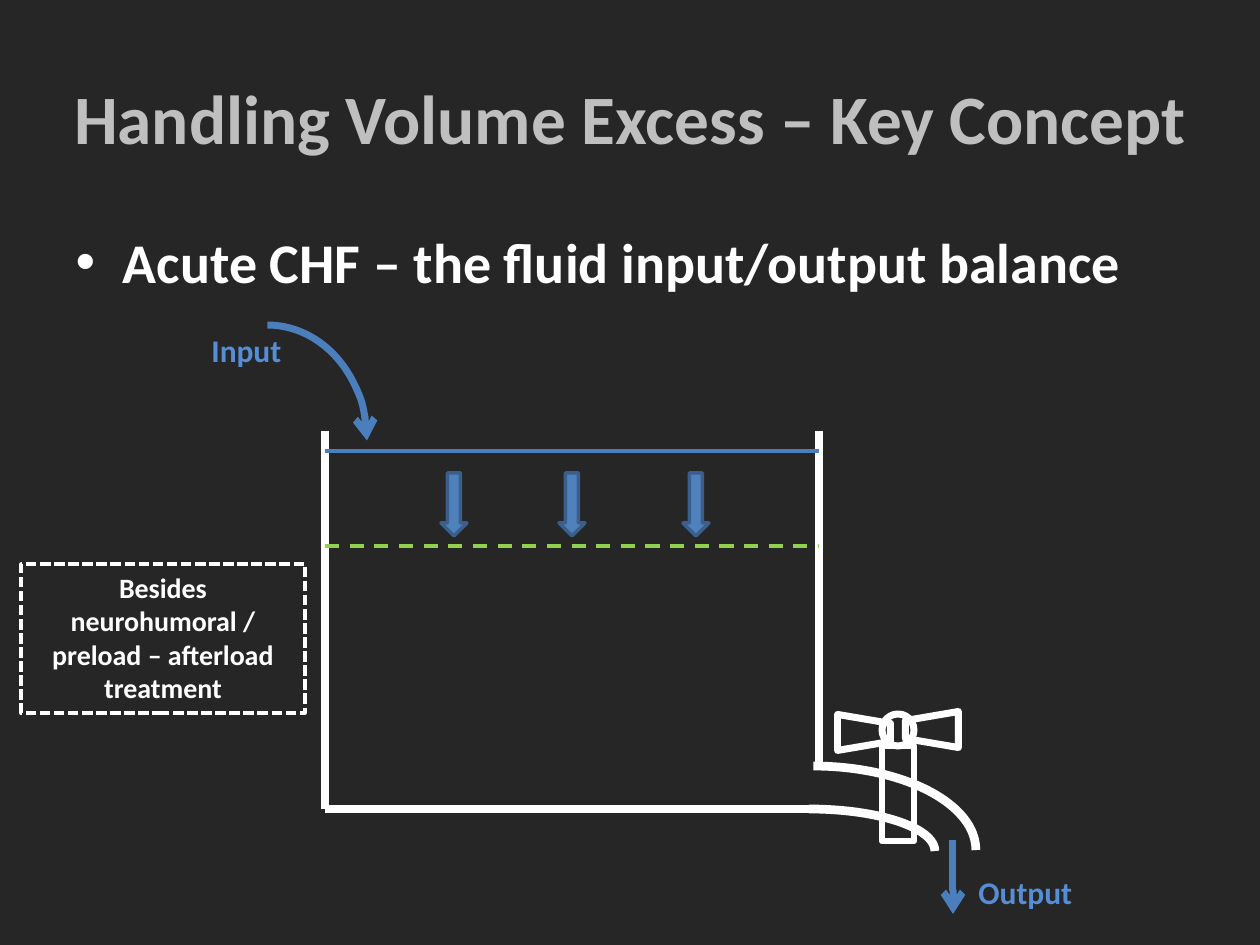
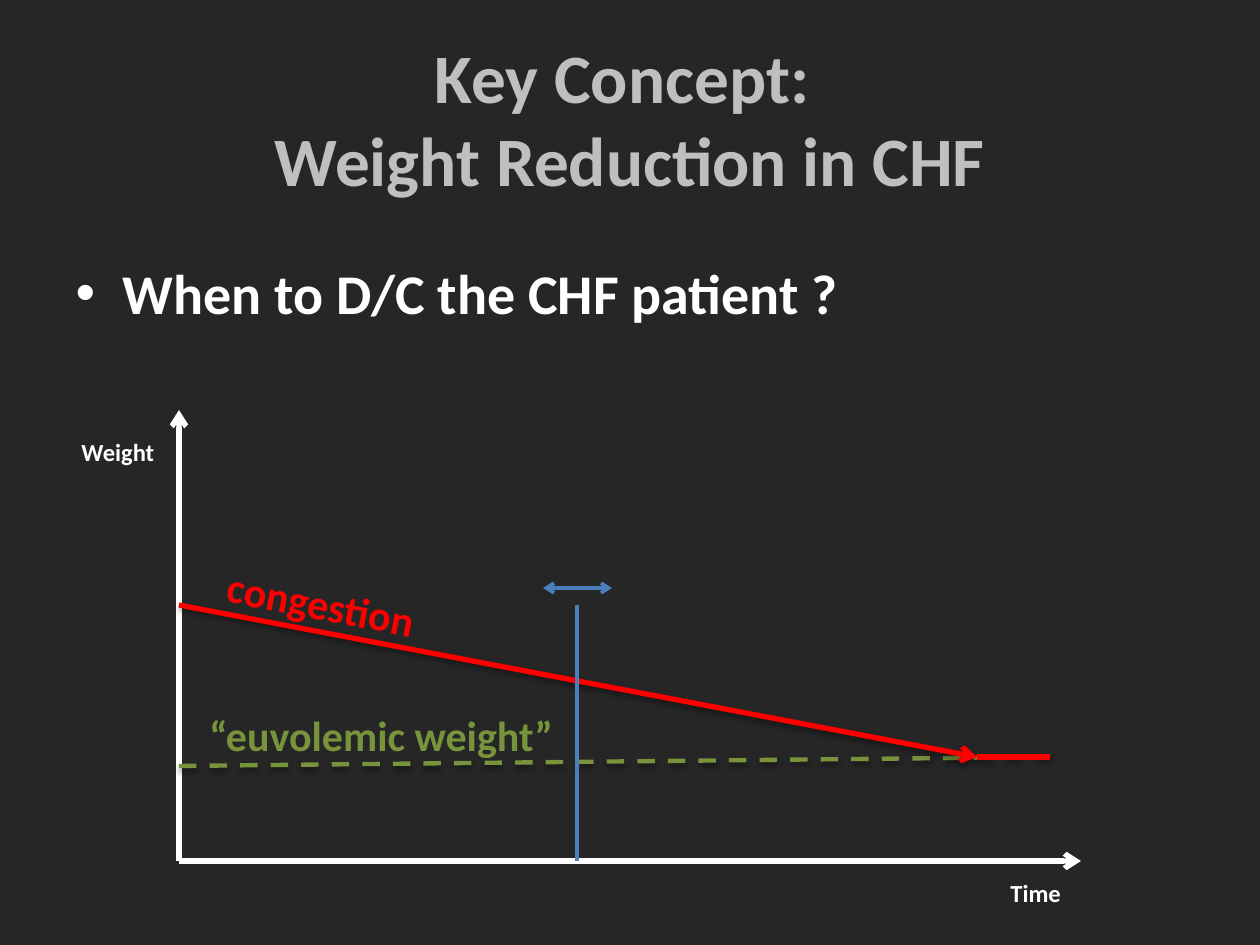
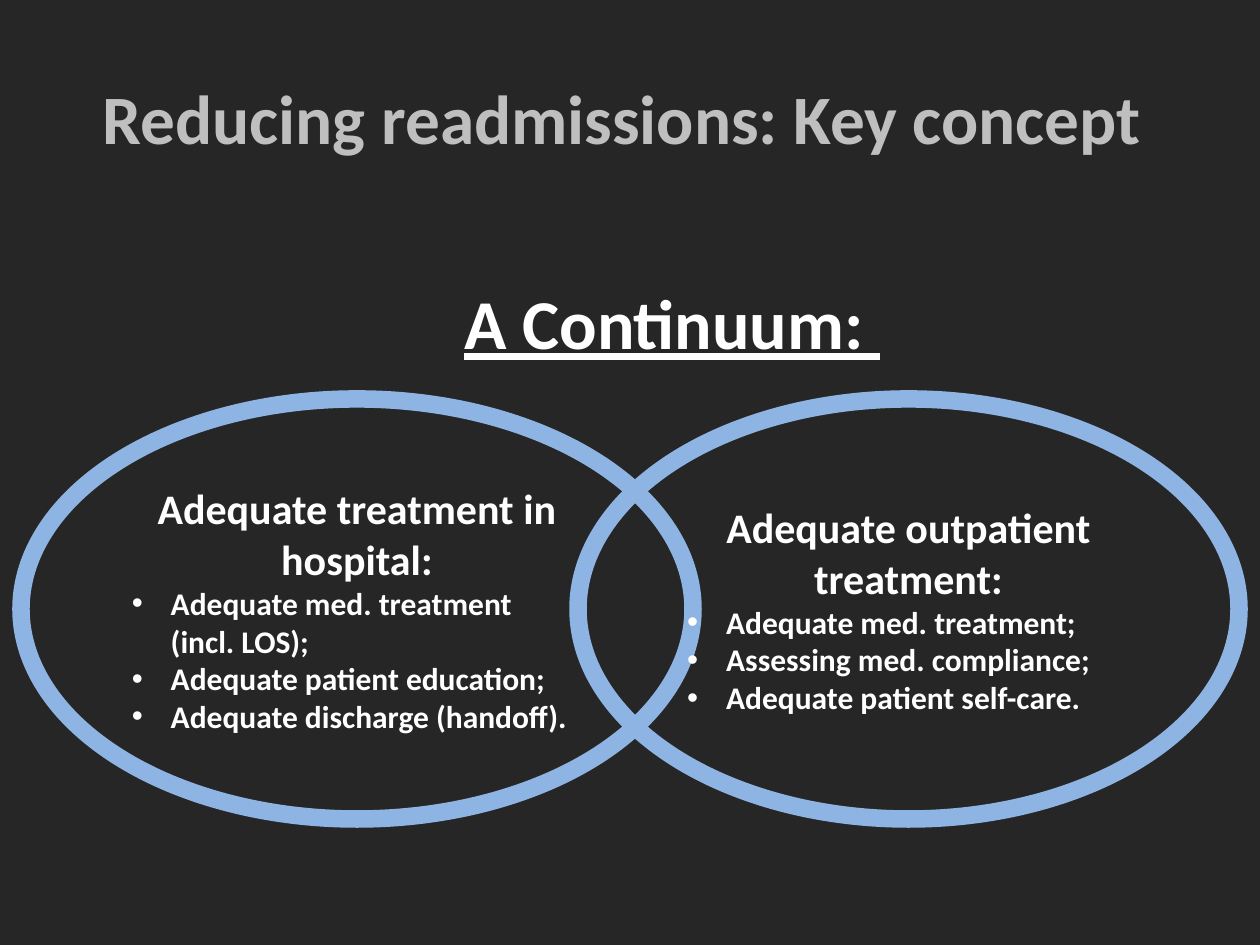
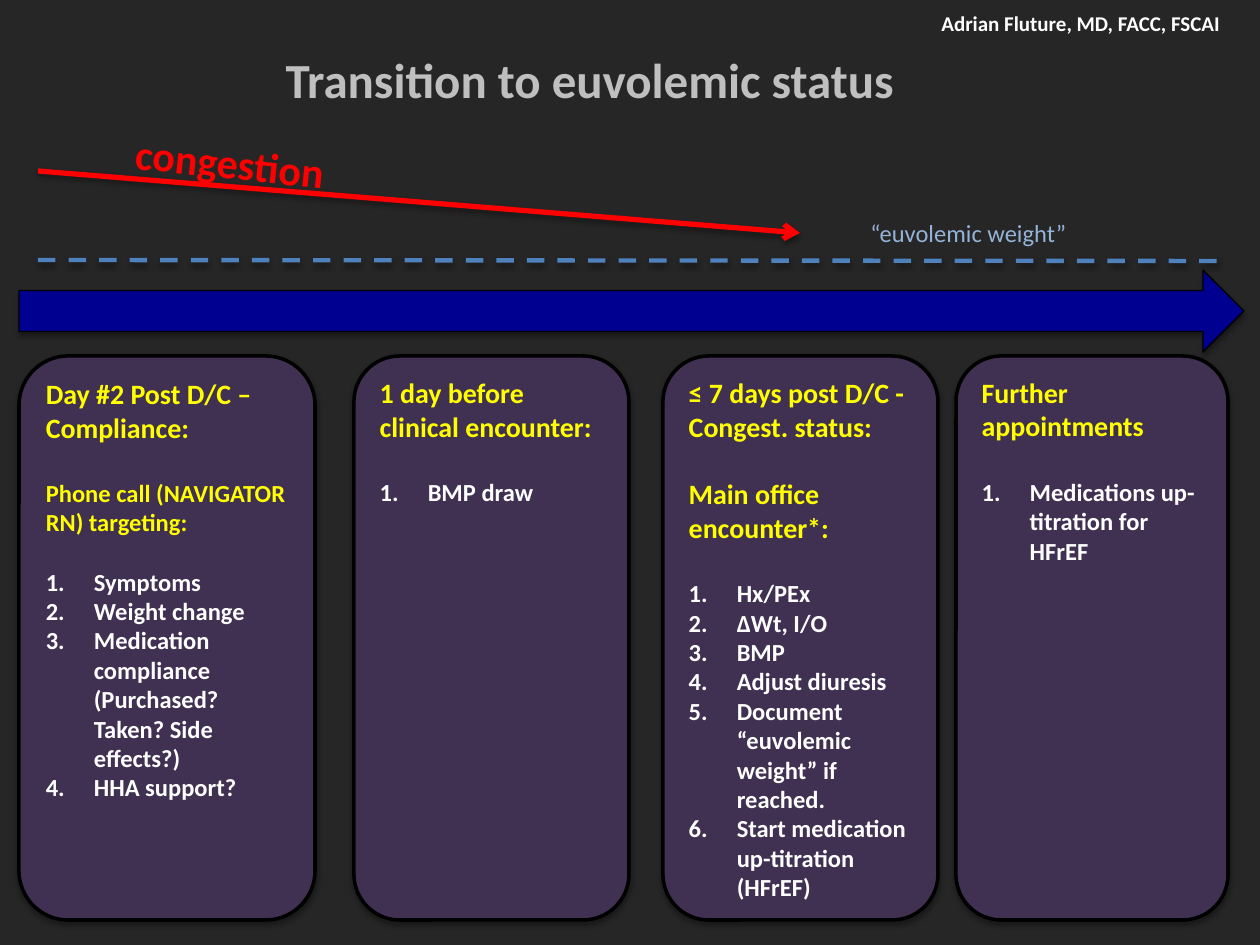
from lxml.etree import SubElement
from pptx import Presentation
from pptx.dml.color import RGBColor
from pptx.enum.dml import MSO_LINE
from pptx.enum.shapes import MSO_CONNECTOR, MSO_SHAPE
from pptx.enum.text import MSO_ANCHOR, MSO_AUTO_SIZE, PP_ALIGN
from pptx.oxml.ns import qn
from pptx.util import Pt

PX = 914400 / 126
rgb = RGBColor.from_string

# Shared colours and formats
DARK, BLACK, WHITE, SILVER = "262626", "000000", "FFFFFF", "BFBFBF"
BLUE, SKY, RED, GREEN = "4B7EBC", "558ED5", "FF0000", "77933C"
YELLOW, PLUM = "FFFF00", "403152"
FONT = {"name": "Calibri", "bold": True}
LEFT, CENTER = PP_ALIGN.LEFT, PP_ALIGN.CENTER
LINE_SHADOW, BLOCK_SHADOW = (38, 1.6), (35, 1.8)


def draw_outline(item, color, width, dash=None, heads=(), shadow=None):
    """Colour, dashes, arrowheads and shadow for a line or a shape."""
    item.line.color.rgb = rgb(color)
    item.line.width = Pt(width)
    if dash:
        item.line.dash_style = dash
    properties = item._element.spPr
    for end in heads:
        SubElement(properties.find(qn("a:ln")), qn(f"a:{end}"), type="arrow")
    effects = SubElement(properties, qn("a:effectLst"))
    if shadow:
        alpha, distance = shadow
        outer = SubElement(effects, qn("a:outerShdw"), blurRad=str(Pt(3.1)),
                           dist=str(Pt(distance)), dir="5400000", rotWithShape="0")
        shade = SubElement(outer, qn("a:srgbClr"), val=BLACK)
        SubElement(shade, qn("a:alpha"), val=str(alpha * 1000))


def write(frame, text, size, color, align=LEFT, bullet=None, hang=0, before=None, **look):
    """Add one paragraph, using the empty first one if there is one."""
    paragraph = frame.add_paragraph() if frame.text else frame.paragraphs[0]
    paragraph.text = text
    paragraph.alignment = align
    if before is not None:
        paragraph.space_before = Pt(before)
    for run in paragraph.runs:
        for name, value in {**FONT, "size": Pt(size), **look}.items():
            setattr(run.font, name, value)
        run.font.color.rgb = rgb(color)
    if bullet:
        settings = paragraph._p.get_or_add_pPr()
        settings.set("marL", str(round(hang * PX)))
        settings.set("indent", str(round(-hang * PX)))
        if bullet == "1.":
            SubElement(settings, qn("a:buFont"), typeface="+mj-lt")
            SubElement(settings, qn("a:buAutoNum"), type="arabicPeriod")
        else:
            SubElement(settings, qn("a:buFont"), typeface="Arial")
            SubElement(settings, qn("a:buChar"), char=bullet)
    return paragraph


prs = Presentation()
prs.slide_width, prs.slide_height = round(1260 * PX), round(945 * PX)
backdrop = prs.slide_master.background.fill
backdrop.solid()
backdrop.fore_color.rgb = rgb(DARK)

# Slides with their titles
titles = [
    ("Handling Volume Excess – Key Concept", (32, 38, 1197, 158), 39.6, CENTER),
    ("Key Concept: \vWeight Reduction in CHF", (63, 38, 1134, 158), 39.6, CENTER),
    ("Reducing readmissions: Key concept ", (63, 38, 1134, 158), 39.6, CENTER),
    ("Transition to euvolemic status", (273, 43, 655, 72), 28, LEFT),
]
slides = []
for number, (text, box, size, align) in enumerate(titles, 1):
    slide = prs.slides.add_slide(prs.slide_layouts[5 if number == 4 else 1])
    title = slide.shapes.title
    title.left, title.top, title.width, title.height = [round(v * PX) for v in box]
    title.text_frame.auto_size = MSO_AUTO_SIZE.NONE
    write(title.text_frame, text, size, SILVER, align)
    slides.append(slide)
balance, weight, continuum, transition = slides

# Body lists
bodies = [
    (balance, "Acute CHF – the fluid input/output balance", (63, 221, 1134, 105), 32, {}),
    (weight, "When to D/C the CHF patient ?", (63, 252, 1134, 95), 32, {}),
    (continuum, "A Continuum: ", (84, 273, 1050, 95), 40,
     {"align": CENTER, "underline": True}),
]
for slide, text, box, size, look in bodies:
    body = slide.placeholders[1]
    body.left, body.top, body.width, body.height = [round(v * PX) for v in box]
    body.text_frame.auto_size = MSO_AUTO_SIZE.NONE
    line = write(body.text_frame, text, size, WHITE, **look)
    if slide is continuum:
        line.level = 2
        settings = line._p.get_or_add_pPr()
        settings.set("marL", str(round(126 * PX)))
        settings.set("indent", "0")
        SubElement(settings, qn("a:buNone"))

# Tank, flow arrows and tap; (shape, box, fill, line, width, rotation, heads)
tank_parts = [
    (MSO_SHAPE.ARC, (683, 809, 252, 84), None, WHITE, 5, 0, ()),
    (MSO_SHAPE.ARC, (651, 766, 325, 168), None, WHITE, 5, 0, ()),
    *[(MSO_SHAPE.DOWN_ARROW, (x, 473, 26, 63), "4F81BD", "3A5F8C", 2, 0, ())
      for x in (441, 559, 683)],
    (MSO_SHAPE.ARC, (168, 325, 199, 231), None, BLUE, 4, 0, ("tailEnd",)),
    (MSO_SHAPE.RECTANGLE, (882, 746, 32, 95), None, WHITE, 3.75, 0, ()),
    (MSO_SHAPE.OVAL, (882, 714, 32, 32), None, WHITE, 4, 0, ()),
    (MSO_SHAPE.TRAPEZOID, (914, 703, 36, 53), None, WHITE, 4, 270, ()),
    (MSO_SHAPE.TRAPEZOID, (846, 706, 36, 53), None, WHITE, 4, 90, ()),
]
for kind, box, fill, color, width, rotation, heads in tank_parts:
    part = balance.shapes.add_shape(kind, *[round(v * PX) for v in box])
    part.rotation = rotation
    if fill:
        part.fill.solid()
        part.fill.fore_color.rgb = rgb(fill)
    else:
        part.fill.background()
    draw_outline(part, color, width, heads=heads)

# Treatment note beside the tank
note = balance.shapes.add_shape(MSO_SHAPE.RECTANGLE,
                                *[round(v * PX) for v in (21, 564, 284, 149)])
note.fill.background()
draw_outline(note, WHITE, 2, MSO_LINE.SQUARE_DOT)
note.text_frame.word_wrap = True
note.text_frame.vertical_anchor = MSO_ANCHOR.TOP
write(note.text_frame, "Besides neurohumoral / preload – afterload treatment",
      16, WHITE, CENTER)

# Overlapping stages of care
stages = [
    ((21, 399, 672, 420), "Adequate treatment in hospital:",
     ["Adequate med. treatment (incl. LOS);", "Adequate patient education;",
      "Adequate discharge (handoff)."]),
    ((578, 399, 661, 420), "Adequate outpatient treatment:",
     ["Adequate med. treatment;", "Assessing med. compliance;",
      "Adequate patient self-care."]),
]
for box, heading, measures in stages:
    stage = continuum.shapes.add_shape(MSO_SHAPE.OVAL, *[round(v * PX) for v in box])
    stage.fill.background()
    draw_outline(stage, "8EB4E3", 10)
    stage.text_frame.word_wrap = True
    stage.text_frame.vertical_anchor = MSO_ANCHOR.MIDDLE
    write(stage.text_frame, heading, 24, WHITE, CENTER)
    for measure in measures:
        write(stage.text_frame, measure, 18, WHITE, bullet="•", hang=39)

# Follow-up cards; headings are (text, size, space before)
cards = [
    (19, 296, [("Day #2 Post D/C –", 16, 0), ("Compliance:", 16, 0),
               ("Phone call (NAVIGATOR RN) targeting:", 14, 19.5)], 17,
     ["Symptoms", "Weight change",
      "Medication compliance (Purchased? Taken? Side effects?)", "HHA support?"]),
    (354, 275, [("1 day before clinical encounter:", 16, 0)], 19.5, ["BMP draw"]),
    (663, 275, [("≤ 7 days post D/C -", 16, 0), ("Congest. status:", 16, 0),
                ("Main office encounter*:", 16, 19.5)], 19.5,
     ["Hx/PEx", "ΔWt, I/O", "BMP", "Adjust diuresis",
      "Document “euvolemic weight” if reached.",
      "Start medication up-titration (HFrEF)"]),
    (956, 272, [("Further appointments", 16, 0)], 19.5,
     ["Medications up-titration for HFrEF"]),
]
for left, width, headings, gap, steps in cards:
    card = transition.shapes.add_shape(
        MSO_SHAPE.ROUNDED_RECTANGLE, *[round(v * PX) for v in (left, 356, width, 564)])
    card.fill.solid()
    card.fill.fore_color.rgb = rgb(PLUM)
    draw_outline(card, BLACK, 2, shadow=BLOCK_SHADOW)
    card.text_frame.word_wrap = True
    card.text_frame.vertical_anchor = MSO_ANCHOR.TOP
    for text, size, before in headings:
        write(card.text_frame, text, size, YELLOW, before=before)
    for index, step in enumerate(steps):
        write(card.text_frame, step, 14, WHITE, bullet="1.", hang=48,
              before=0 if index else gap)

# Timeline arrow
timeline = transition.shapes.add_shape(MSO_SHAPE.RIGHT_ARROW,
                                       *[round(v * PX) for v in (19, 270, 1225, 82)])
timeline.fill.solid()
timeline.fill.fore_color.rgb = rgb("000090")
draw_outline(timeline, BLACK, 0.75, shadow=BLOCK_SHADOW)

# Straight lines: (slide, ends, colour, width, format)
arrow = {"heads": ("tailEnd",)}
dashed = {"dash": MSO_LINE.DASH}
shaded = {"shadow": LINE_SHADOW}
lines = [
    # tank walls, fluid levels and outflow
    (balance, (325, 431, 325, 809), WHITE, 5, {}),
    (balance, (325, 809, 819, 809), WHITE, 5, {}),
    (balance, (819, 431, 819, 766), WHITE, 5, {}),
    (balance, (325, 451, 819, 451), BLUE, 2, {}),
    (balance, (325, 546, 819, 546), "92D050", 2, dashed),
    (balance, (953, 840, 953, 914), BLUE, 4, arrow),
    # weight axes, trends and discharge marker
    (weight, (179, 861, 179, 410), WHITE, 3, arrow),
    (weight, (179, 861, 1081, 861), WHITE, 3, arrow),
    (weight, (179, 766, 1050, 757), GREEN, 2.5, {**dashed, **shaded}),
    (weight, (179, 605, 977, 757), RED, 3, {**arrow, **shaded}),
    (weight, (977, 757, 1050, 757), RED, 3, {}),
    (weight, (577, 605, 577, 861), BLUE, 2, {}),
    (weight, (543, 588, 612, 588), BLUE, 2, {"heads": ("headEnd", "tailEnd")}),
    # congestion trend and target weight
    (transition, (38, 171, 800, 233), RED, 3, {**arrow, **shaded}),
    (transition, (38, 260, 1229, 261), "4F81BD", 2.5, {**dashed, **shaded}),
]
for slide, ends, color, width, look in lines:
    line = slide.shapes.add_connector(MSO_CONNECTOR.STRAIGHT,
                                      *[round(v * PX) for v in ends])
    draw_outline(line, color, width, **look)

# Labels: (slide, text, box, size, colour, rotation, format)
labels = [
    (balance, "Output", (966, 867, 168, 50), 18, SKY, 0, {}),
    (balance, "Input", (199, 325, 116, 50), 18, SKY, 0, {}),
    (weight, "Weight", (69, 431, 105, 43), 14, WHITE, 0, {}),
    (weight, "Time", (998, 872, 84, 43), 14, WHITE, 0, {}),
    (weight, "congestion", (183, 572, 276, 63), 24, RED, 10.9, {"align": CENTER}),
    (weight, "“euvolemic weight”", (197, 703, 381, 63), 24, GREEN, 0, {}),
    (transition, "congestion", (92, 131, 276, 63), 24, RED, 6.1, {"align": CENTER}),
    (transition, "Adrian Fluture, MD, FACC, FSCAI", (929, 4, 329, 38), 12, WHITE, 0, {}),
    (transition, "“euvolemic weight”", (858, 212, 249, 43), 14, "95B3D7", 0,
     {"bold": False}),
]
for slide, text, box, size, color, rotation, look in labels:
    label = slide.shapes.add_textbox(*[round(v * PX) for v in box])
    label.rotation = rotation
    label.text_frame.word_wrap = True
    label.text_frame.auto_size = MSO_AUTO_SIZE.SHAPE_TO_FIT_TEXT
    write(label.text_frame, text, size, color, **look)

prs.save("out.pptx")
